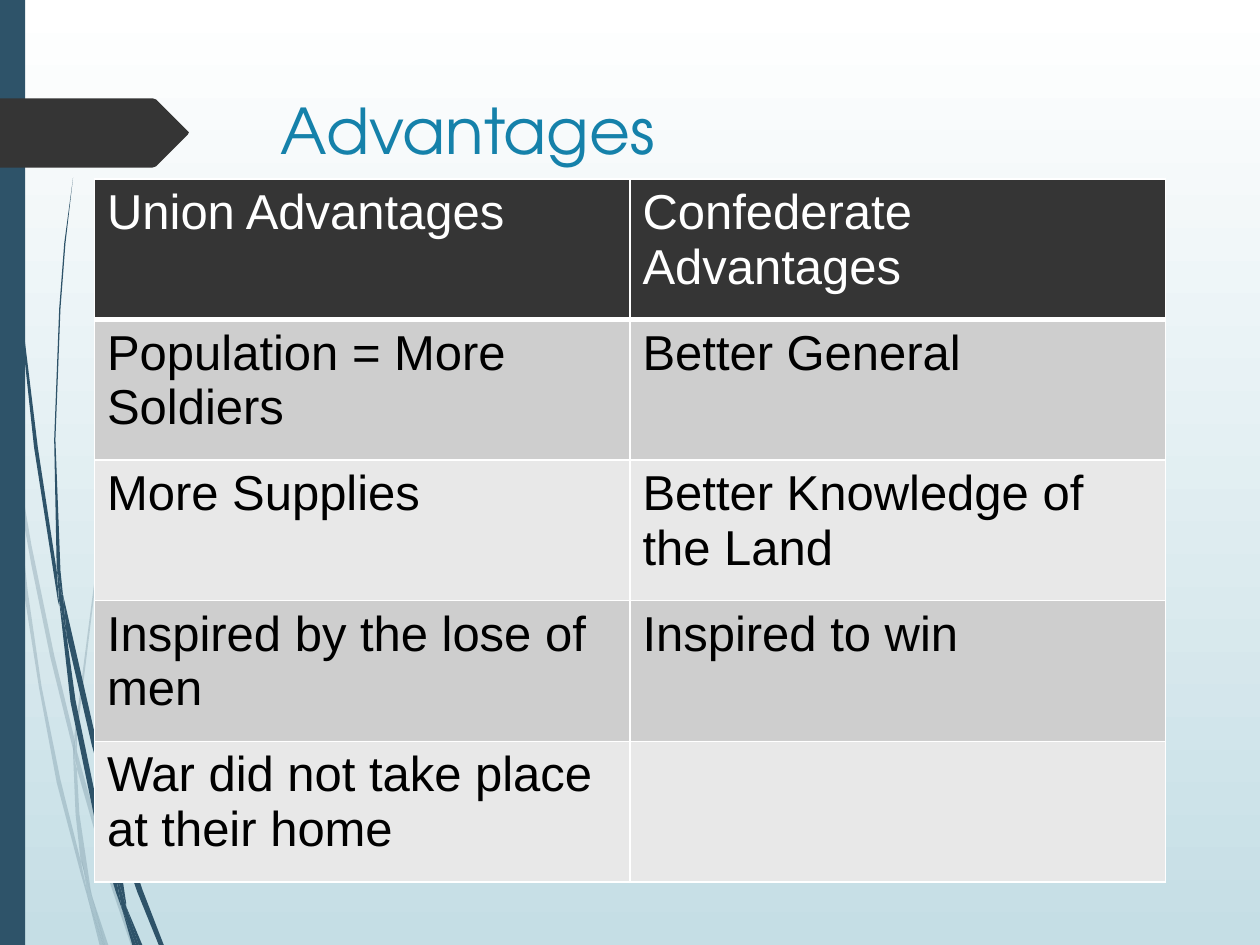
from dataclasses import dataclass
from typing import Optional

from lxml.etree import SubElement
from pptx import Presentation
from pptx.dml.color import RGBColor
from pptx.enum.shapes import MSO_SHAPE
from pptx.oxml.ns import qn
from pptx.util import Emu, Inches, Pt

SLIDE_WIDTH, SLIDE_HEIGHT = Inches(10), Inches(7.5)

WHITE = RGBColor(0xFF, 0xFF, 0xFF)
BLACK = RGBColor(0x00, 0x00, 0x00)
PALE_TEAL = RGBColor(0xC5, 0xDE, 0xE5)
NAVY = RGBColor(0x2E, 0x53, 0x69)
CHARCOAL = RGBColor(0x35, 0x35, 0x35)
TITLE_BLUE = RGBColor(0x15, 0x81, 0xAA)
DARK_BAND = RGBColor(0xCE, 0xCE, 0xCE)
LIGHT_BAND = RGBColor(0xE8, 0xE8, 0xE8)

Outline = list[tuple[float, float]]


@dataclass(frozen=True)
class Area:
    """A rectangle given as shares of the slide's width and height."""
    left: float
    top: float
    width: float
    height: float

    def box(self) -> tuple[Emu, Emu, Emu, Emu]:
        return (Emu(round(self.left * SLIDE_WIDTH)), Emu(round(self.top * SLIDE_HEIGHT)),
                Emu(round(self.width * SLIDE_WIDTH)), Emu(round(self.height * SLIDE_HEIGHT)))


@dataclass(frozen=True)
class GrassTuft:
    """Blades of grass that share one opacity; outlines are in inches."""
    blades: list[Outline]
    opacity: Optional[int] = None


SIDE_BAR = Area(0, 0, 0.02, 1)
TITLE = Area(0.213, 0.68 / 7.5, 0.721, 1.4 / 7.5)
TABLE = Area(0.075, 1.42 / 7.5, 0.85, 5.58 / 7.5)

ARROW: Outline = [(1.49, 1.07), (1.24, 1.32), (1.21, 1.33), (0, 1.33), (0, 0.78),
                  (1.21, 0.78), (1.24, 0.79), (1.49, 1.04), (1.5, 1.05)]

FAINT_TUFT = GrassTuft(opacity=20, blades=[
    [(0.08, 3.5), (0.06, 3.22), (0, 2.82), (0, 2.99), (0.07, 3.44)],
    [(0.4, 5.22), (0.59, 5.99), (0.59, 5.86), (0.43, 5.2), (0.25, 4.33), (0.1, 3.45),
     (0.12, 3.76), (0.25, 4.49)],
    [(0.64, 6.07), (0.61, 5.96), (0.61, 6.1), (0.85, 6.94), (1.04, 7.5), (1.08, 7.5),
     (0.88, 6.92)],
    [(0.83, 7.5), (0.86, 7.5), (0.73, 7.11)],
    [(0.64, 6.83), (0.48, 6.19), (0.33, 5.45), (0.22, 4.69), (0.12, 3.76), (0.08, 3.5),
     (0.19, 4.7), (0.31, 5.46), (0.45, 6.21), (0.64, 6.93), (0.7, 7.14), (0.69, 7.07)],
    [(0.58, 5.99), (0.6, 6.46), (0.64, 6.83), (0.67, 6.92), (0.73, 7.11), (0.72, 7.06),
     (0.63, 6.46), (0.61, 6.1)],
    [(0.61, 5.84), (0.76, 4.62), (1.11, 3.49), (1.59, 2.45), (1.87, 1.98), (2.01, 1.75),
     (2.17, 1.54), (2.17, 1.53), (2.01, 1.75), (1.86, 1.97), (1.58, 2.44), (1.1, 3.48),
     (0.75, 4.61), (0.59, 5.84), (0.61, 5.96)],
    [(0.7, 7.14), (0.79, 7.5), (0.82, 7.5)],
    [(0.61, 6.08), (0.61, 5.96), (0.59, 5.86), (0.58, 5.99)],
    [(0.67, 6.92), (0.65, 6.83), (0.69, 7.07), (0.7, 7.14), (0.82, 7.5), (0.83, 7.5),
     (0.73, 7.11)],
])

SOLID_TUFT = GrassTuft(blades=[
    [(0.05, 1.1), (0.14, 2.33), (0.27, 3.55), (0.46, 4.77), (0.47, 4.81), (0.45, 4.53),
     (0.3, 3.55), (0.15, 2.32), (0.06, 1.09), (0.04, 0.48), (0.03, 0), (0.02, 0),
     (0.03, 0.48)],
    [(0.73, 5.92), (0.88, 6.45), (0.88, 6.31), (0.77, 5.9), (0.5, 4.72), (0.53, 5.05)],
    [(0.94, 6.49), (0.91, 6.41), (0.91, 6.56), (1.09, 7.08), (1.26, 7.5), (1.3, 7.5),
     (1.13, 7.06)],
    [(0.91, 6.91), (0.81, 6.57), (0.6, 5.56), (0.53, 5.05), (0.47, 4.77), (0.56, 5.57),
     (0.77, 6.59), (0.92, 7.08), (0.97, 7.22), (0.96, 7.17)],
    [(0.5, 4.72), (0.48, 4.53), (0.44, 3.49), (0.48, 2.45), (0.52, 1.93), (0.58, 1.41),
     (0.51, 1.93), (0.47, 2.45), (0.43, 3.49), (0.45, 4.49), (0.49, 4.72)],
    [(1.1, 7.5), (1.13, 7.5), (1, 7.19)],
    [(0.47, 4.77), (0.53, 5.05), (0.5, 4.72), (0.49, 4.72), (0.45, 4.49)],
    [(0.91, 6.33), (1.03, 5.52), (1.31, 4.76), (1.69, 4.06), (1.91, 3.74), (2.16, 3.44),
     (1.91, 3.73), (1.68, 4.05), (1.29, 4.74), (1.01, 5.51), (0.88, 6.31), (0.91, 6.41)],
    [(0.97, 7.22), (1.05, 7.5), (1.08, 7.5)],
    [(0.88, 6.45), (0.91, 6.91), (0.96, 7.06), (1, 7.19), (1, 7.16), (0.91, 6.56)],
    [(0.88, 6.45), (0.91, 6.56), (0.91, 6.41), (0.88, 6.31)],
    [(0.96, 7.06), (0.91, 6.91), (0.96, 7.17), (0.97, 7.22), (1.08, 7.5), (1.1, 7.5),
     (1, 7.19)],
])

ADVANTAGES = [
    ("Union Advantages", "Confederate Advantages"),
    ("Population = More Soldiers", "Better General"),
    ("More Supplies", "Better Knowledge of the Land"),
    ("Inspired by the lose of men", "Inspired to win"),
    ("War did not take place at their home", ""),
]


def paint(shape, color: RGBColor, opacity: Optional[int] = None) -> None:
    shape.shadow.inherit = False
    shape.line.fill.background()
    shape.fill.solid()
    shape.fill.fore_color.rgb = color
    if opacity is not None:
        srgb = shape.fill._xPr.find(".//" + qn("a:srgbClr"))
        SubElement(srgb, qn("a:alpha"), val=str(opacity * 1000))


def draw_outline(shapes, outline: Outline, color: RGBColor,
                 opacity: Optional[int] = None) -> None:
    points = [(Inches(x), Inches(y)) for x, y in outline]
    builder = shapes.build_freeform(*points[0])
    builder.add_line_segments(points[1:], close=True)
    paint(builder.convert_to_shape(), color, opacity)


def draw_tuft(slide, tuft: GrassTuft) -> None:
    group = slide.shapes.add_group_shape()
    for blade in tuft.blades:
        draw_outline(group.shapes, blade, NAVY, tuft.opacity)


def write_text(text_frame, text: str, *, font: str, size: float, color: RGBColor) -> None:
    text_frame.word_wrap = True
    run = text_frame.paragraphs[0].add_run()
    run.text = text
    run.font.name = font
    run.font.size = Pt(size)
    run.font.color.rgb = color


def set_borders(cell, color: RGBColor, bottom_width: float) -> None:
    properties = cell._tc.get_or_add_tcPr()
    for side, width in (("L", 1), ("R", 1), ("T", 1), ("B", bottom_width)):
        line = SubElement(properties, qn(f"a:ln{side}"), w=str(Pt(width)))
        fill = SubElement(line, qn("a:solidFill"))
        SubElement(fill, qn("a:srgbClr"), val=str(color))


def draw_table(slide, area: Area, rows: list[tuple[str, str]]) -> None:
    left, top, width, height = area.box()
    table = slide.shapes.add_table(len(rows), len(rows[0]), left, top, width, height).table
    table.first_row = table.horz_banding = False
    for row_index, row in enumerate(rows):
        is_header = row_index == 0
        band = CHARCOAL if is_header else DARK_BAND if row_index % 2 else LIGHT_BAND
        for column_index, text in enumerate(row):
            cell = table.cell(row_index, column_index)
            set_borders(cell, WHITE, bottom_width=3 if is_header else 1)
            cell.fill.solid()
            cell.fill.fore_color.rgb = band
            if text:
                write_text(cell.text_frame, text, font="Arial", size=28,
                           color=WHITE if is_header else BLACK)


def main() -> None:
    presentation = Presentation()
    presentation.slide_width, presentation.slide_height = SLIDE_WIDTH, SLIDE_HEIGHT
    slide = presentation.slides.add_slide(presentation.slide_layouts[6])

    # Background fading downwards
    background = slide.background.fill
    background.gradient()
    background.gradient_angle = 270
    for stop, color in zip(background.gradient_stops, (WHITE, PALE_TEAL)):
        stop.color.rgb = color

    # Grass, side bar and arrow on the left edge
    for tuft in (FAINT_TUFT, SOLID_TUFT):
        draw_tuft(slide, tuft)
    paint(slide.shapes.add_shape(MSO_SHAPE.RECTANGLE, *SIDE_BAR.box()), NAVY)
    draw_outline(slide.shapes, ARROW, CHARCOAL)

    # Title and table
    title = slide.shapes.add_textbox(*TITLE.box())
    write_text(title.text_frame, "Advantages", font="TeX Gyre Adventor", size=36,
               color=TITLE_BLUE)
    draw_table(slide, TABLE, ADVANTAGES)

    presentation.save("out.pptx")


if __name__ == "__main__":
    main()
